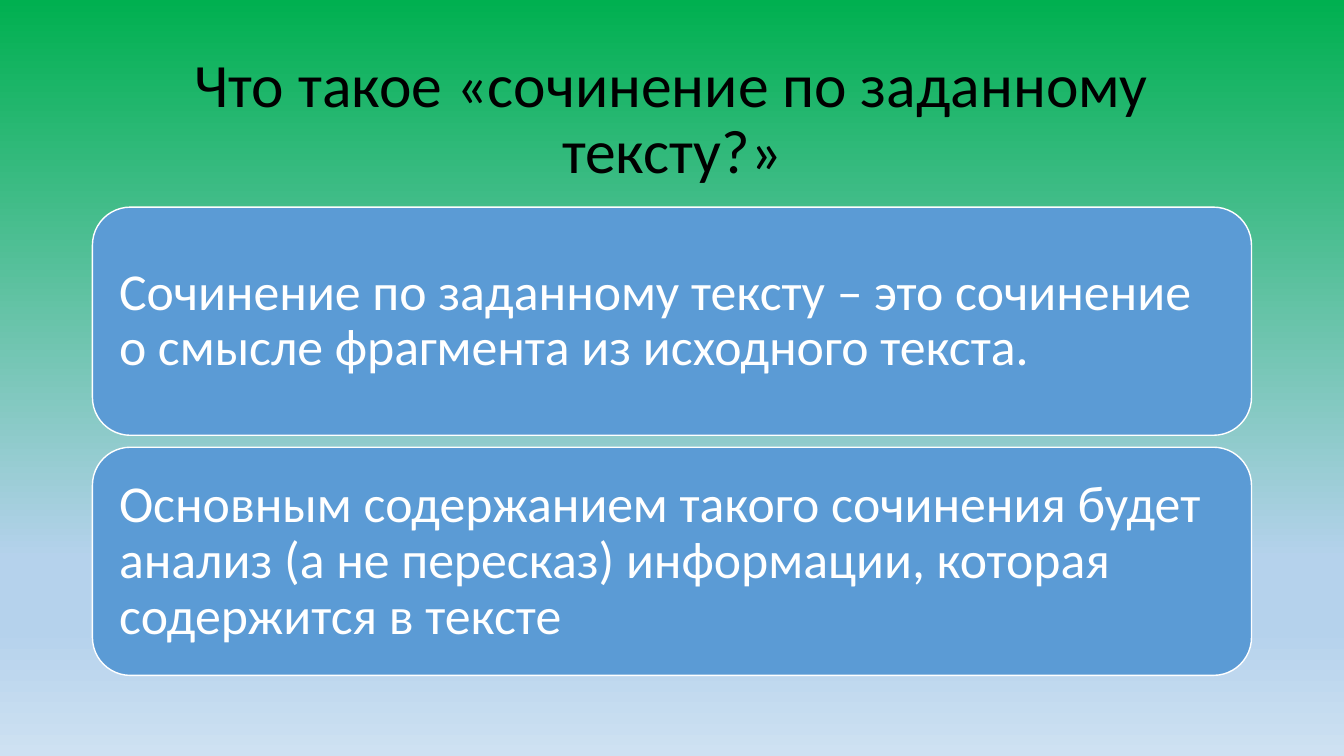
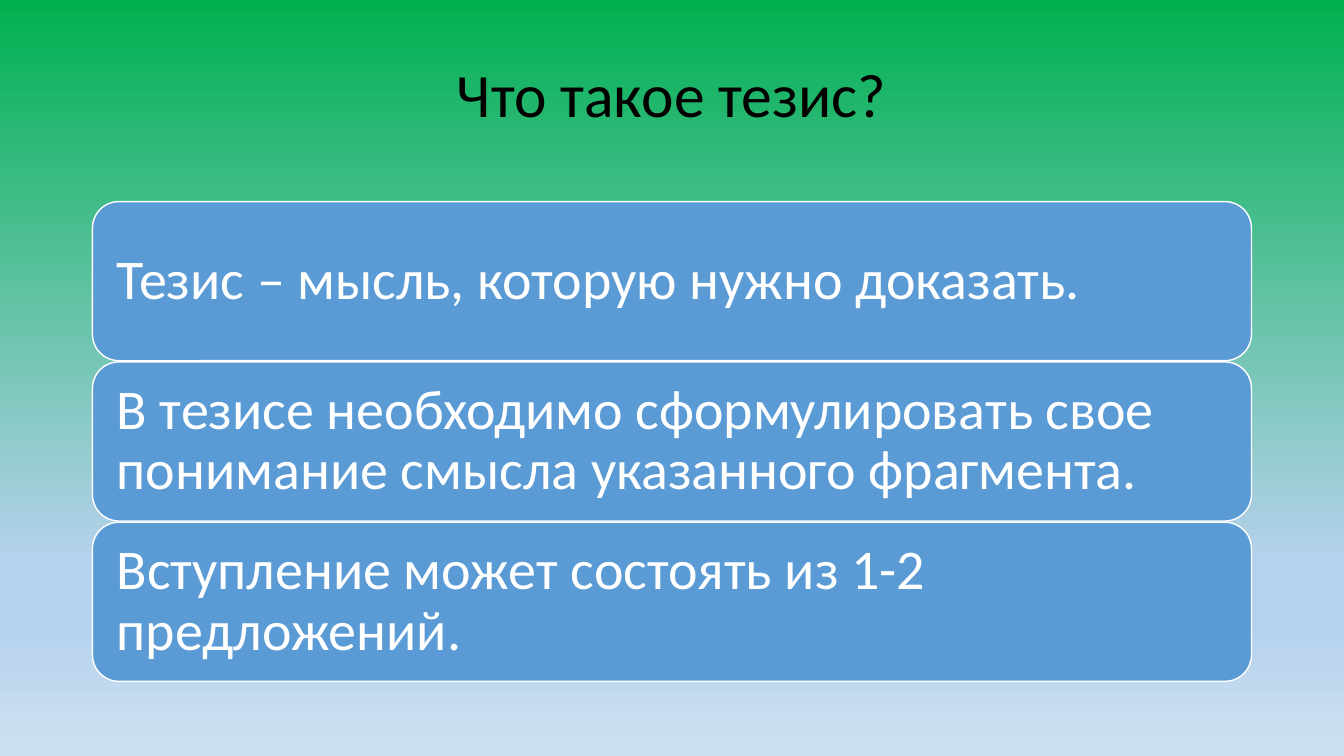
from copy import deepcopy
from dataclasses import dataclass

from pptx import Presentation
from pptx.dml.color import RGBColor
from pptx.enum.shapes import MSO_SHAPE
from pptx.enum.text import MSO_ANCHOR, PP_ALIGN
from pptx.oxml.ns import qn
from pptx.util import Cm, Pt

ROUNDED = MSO_SHAPE.ROUNDED_RECTANGLE
MIDDLE = MSO_ANCHOR.MIDDLE
LEFT = PP_ALIGN.LEFT
CENTER = PP_ALIGN.CENTER
BLANK_LAYOUT = 6


@dataclass(frozen=True)
class Theme:
    font: str = "Calibri"
    title_color: str = "000000"
    card_text: str = "FFFFFF"
    card_fill: str = "5B9BD5"
    card_line: str = "FFFFFF"
    background: tuple = (
        (0, "00B050"), (74, "B5D2EC"), (83, "B5D2EC"), (100, "CEE1F2"))
    title_size: int = 44
    two_card_size: int = 37
    three_card_size: int = 40
    line_width: int = 1
    line_spacing: float = 0.9
    left: float = 2.33
    width: float = 29.21
    title_top: float = 1.01


class Deck:
    def __init__(self, theme):
        self.theme = theme
        self.presentation = Presentation()
        self.presentation.slide_width = Cm(33.87)
        self.presentation.slide_height = Cm(19.05)
        self.slide = None

    def add_slide(self):
        layout = self.presentation.slide_layouts[BLANK_LAYOUT]
        self.slide = self.presentation.slides.add_slide(layout)
        self.paint_background()

    def paint_background(self):
        fill = self.slide.background.fill
        fill.gradient()
        fill.gradient_angle = 270
        stop_list = next(self.slide.element.iter(qn("a:gsLst")))
        for _ in range(len(self.theme.background) - len(stop_list)):
            stop_list.append(deepcopy(stop_list[0]))
        for stop, (percent, color) in zip(fill.gradient_stops, self.theme.background):
            stop.position = percent / 100
            stop.color.rgb = RGBColor.from_string(color)

    def add_text(self, shape, text, size, color, alignment, **frame_format):
        frame = shape.text_frame
        frame_format.update(word_wrap=True, vertical_anchor=MIDDLE)
        for name, value in frame_format.items():
            setattr(frame, name, value)
        paragraph = frame.paragraphs[0]
        paragraph.alignment = alignment
        paragraph.line_spacing = self.theme.line_spacing
        run = paragraph.add_run()
        run.text = text
        for name, value in {"name": self.theme.font, "size": Pt(size)}.items():
            setattr(run.font, name, value)
        run.font.color.rgb = RGBColor.from_string(color)

    def title(self, text, height):
        theme = self.theme
        box = self.slide.shapes.add_textbox(
            Cm(theme.left), Cm(theme.title_top), Cm(theme.width), Cm(height))
        self.add_text(box, text, theme.title_size, theme.title_color, CENTER)

    def card(self, text, top, height, size, inset):
        theme = self.theme
        shape = self.slide.shapes.add_shape(
            ROUNDED, Cm(theme.left), Cm(top), Cm(theme.width), Cm(height))
        shape.shadow.inherit = False
        shape.fill.solid()
        shape.fill.fore_color.rgb = RGBColor.from_string(theme.card_fill)
        shape.line.color.rgb = RGBColor.from_string(theme.card_line)
        shape.line.width = Pt(theme.line_width)
        margins = {f"margin_{side}": Cm(inset)
                   for side in ("left", "top", "right", "bottom")}
        self.add_text(shape, text, size, theme.card_text, LEFT, **margins)

    def card_stack(self, texts, top, height, gap, size, inset):
        for index, text in enumerate(texts):
            self.card(text, top + index * (height + gap), height, size, inset)


def main():
    theme = Theme()
    deck = Deck(theme)

    deck.add_slide()
    deck.title("Что такое «сочинение по заданному тексту?»", height=4.06)
    deck.card_stack(
        ["Сочинение по заданному тексту – это сочинение о смысле фрагмента "
         "из исходного текста.",
         "Основным содержанием такого сочинения будет анализ (а не пересказ) "
         "информации, которая содержится в тексте"],
        top=5.22, height=5.75, gap=0.3, size=theme.two_card_size, inset=0.39)

    deck.add_slide()
    deck.title("Что такое тезис?", height=2.9)
    deck.card_stack(
        ["Тезис – мысль, которую нужно доказать.",
         "В тезисе необходимо сформулировать свое понимание смысла "
         "указанного фрагмента.",
         "Вступление может состоять из 1-2 предложений."],
        top=5.08, height=4.01, gap=0.03, size=theme.three_card_size, inset=0.42)

    deck.presentation.save("out.pptx")


if __name__ == "__main__":
    main()
